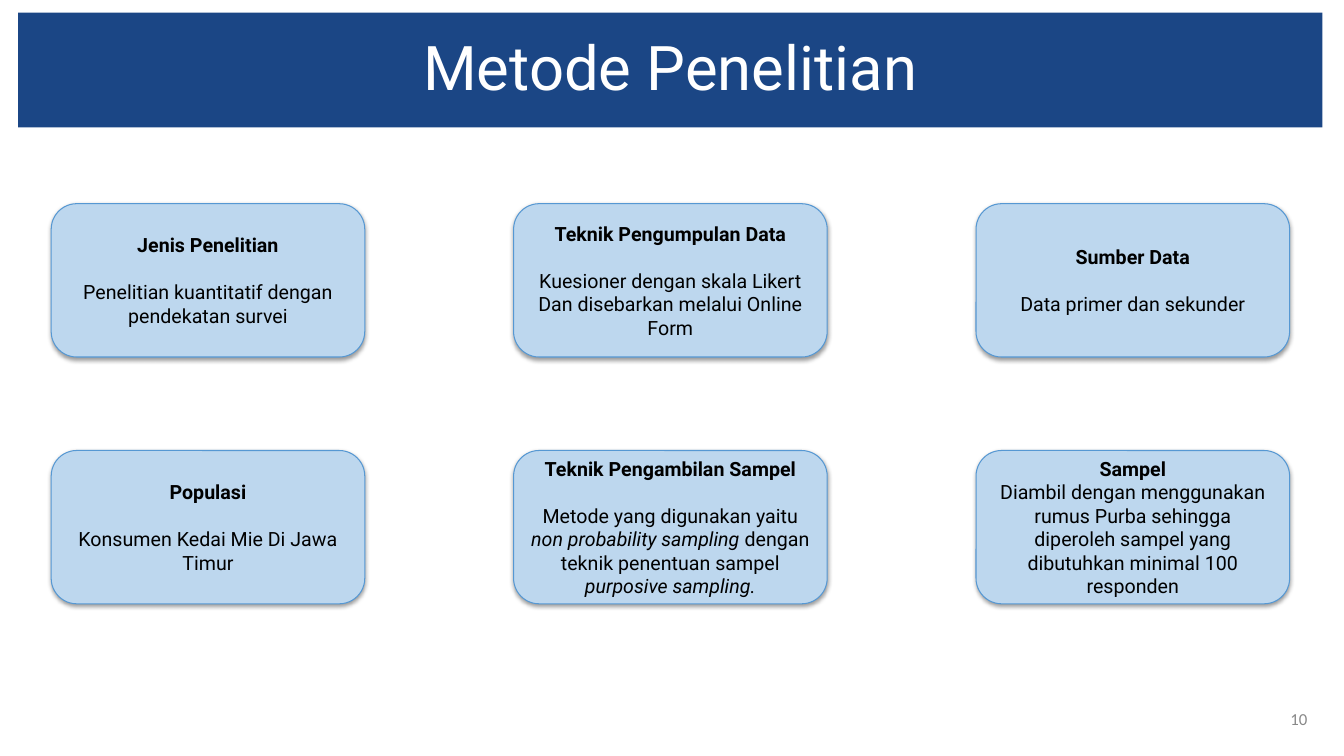
import pptx
import pptx.util
import pptx.dml.color
import pptx.enum.shapes
import pptx.enum.text
import pptx.oxml
from pptx.oxml.ns import nsdecls, qn

Pt = pptx.util.Pt
SHAPE = pptx.enum.shapes.MSO_SHAPE
ALIGN = pptx.enum.text.PP_ALIGN
MIDDLE = pptx.enum.text.MSO_ANCHOR.MIDDLE

COLORS = {
    "banner": "1B4685",
    "card": "BDD7EE",
    "card_line": "5698D3",
    "shadow": "000000",
    "title": "FFFFFF",
    "body": "000000",
    "number": "888888",
}

CARD_WIDTH, CARD_HEIGHT = 224, 109.5
GRID_LEFT, GRID_TOP = 36.6, 145.5
COLUMN_STEP, ROW_STEP = 330.3, 176.3
BLANK_LINE = 16.8

# Each card: heading, space under the heading, paragraphs of (text, italic) spans.
CARDS = [
    [
        ("Jenis Penelitian", BLANK_LINE,
         [[("Penelitian kuantitatif dengan pendekatan survei", False)]]),
        ("Teknik Pengumpulan Data", BLANK_LINE,
         [[("Kuesioner dengan skala Likert", False)],
          [("Dan disebarkan melalui Online Form", False)]]),
        ("Sumber Data", BLANK_LINE,
         [[("Data primer dan sekunder", False)]]),
    ],
    [
        ("Populasi", BLANK_LINE,
         [[("Konsumen Kedai Mie Di Jawa Timur", False)]]),
        ("Teknik Pengambilan Sampel", BLANK_LINE,
         [[("Metode yang digunakan yaitu ", False),
           ("non probability sampling ", True),
           ("dengan teknik penentuan sampel ", False),
           ("purposive sampling.", True)]]),
        ("Sampel", 0,
         [[("Diambil dengan menggunakan rumus Purba sehingga diperoleh "
            "sampel yang dibutuhkan minimal 100 responden", False)]]),
    ],
]


def rgb(name):
    return pptx.dml.color.RGBColor.from_string(COLORS[name])


def add_span(para, text, size, color, font="Roboto", bold=False, italic=False):
    span = para.add_run()
    span.text = text
    span.font.name = font
    span.font.size = Pt(size)
    span.font.bold = bold
    span.font.italic = italic
    span.font.color.rgb = rgb(color)


def add_filled_shape(page, kind, box, fill):
    shape = page.shapes.add_shape(kind, *map(Pt, box))
    shape.shadow.inherit = False
    shape.fill.solid()
    shape.fill.fore_color.rgb = rgb(fill)
    shape.text_frame.word_wrap = True
    shape.text_frame.vertical_anchor = MIDDLE
    return shape


def add_drop_shadow(shape):
    effects = shape._element.spPr.find(qn("a:effectLst"))
    effects.append(pptx.oxml.parse_xml(
        f'<a:outerShdw {nsdecls("a")} blurRad="{Pt(3.15)}" dist="{Pt(1.57)}" '
        f'dir="5400000" rotWithShape="0"><a:srgbClr val="{COLORS["shadow"]}">'
        '<a:alpha val="38000"/></a:srgbClr></a:outerShdw>'))


def add_banner(page, box, title):
    banner = add_filled_shape(page, SHAPE.RECTANGLE, box, "banner")
    banner.line.fill.background()
    para = banner.text_frame.paragraphs[0]
    para.alignment = ALIGN.CENTER
    para.line_spacing = 0.9
    add_span(para, title, 44, "title")


def add_card(page, box, heading, gap, body):
    card = add_filled_shape(page, SHAPE.ROUNDED_RECTANGLE, box, "card")
    card.line.color.rgb = rgb("card_line")
    card.line.width = Pt(0.75)
    add_drop_shadow(card)
    para = card.text_frame.paragraphs[0]
    para.alignment = ALIGN.CENTER
    para.space_after = Pt(gap)
    add_span(para, heading, 14, "body", bold=True)
    for spans in body:
        para = card.text_frame.add_paragraph()
        para.alignment = ALIGN.CENTER
        for text, italic in spans:
            add_span(para, text, 14, "body", italic=italic)


def add_card_grid(page, left, top):
    for row, cards in enumerate(CARDS):
        for column, card in enumerate(cards):
            box = (left + column * COLUMN_STEP, top + row * ROW_STEP,
                   CARD_WIDTH, CARD_HEIGHT)
            add_card(page, box, *card)


def add_page_number(page, box, number):
    frame = page.shapes.add_textbox(*map(Pt, box)).text_frame
    frame.word_wrap = True
    frame.vertical_anchor = MIDDLE
    para = frame.paragraphs[0]
    para.alignment = ALIGN.RIGHT
    add_span(para, number, 12, "number", font="Calibri")


def main():
    deck = pptx.Presentation()
    deck.slide_width, deck.slide_height = Pt(960), Pt(540)
    page = deck.slides.add_slide(deck.slide_layouts[6])
    add_banner(page, (13, 9, 931.7, 82), "Metode Penelitian")
    add_card_grid(page, GRID_LEFT, GRID_TOP)
    add_page_number(page, (900, 499, 41, 28.8), "10")
    deck.save("out.pptx")


if __name__ == "__main__":
    main()
